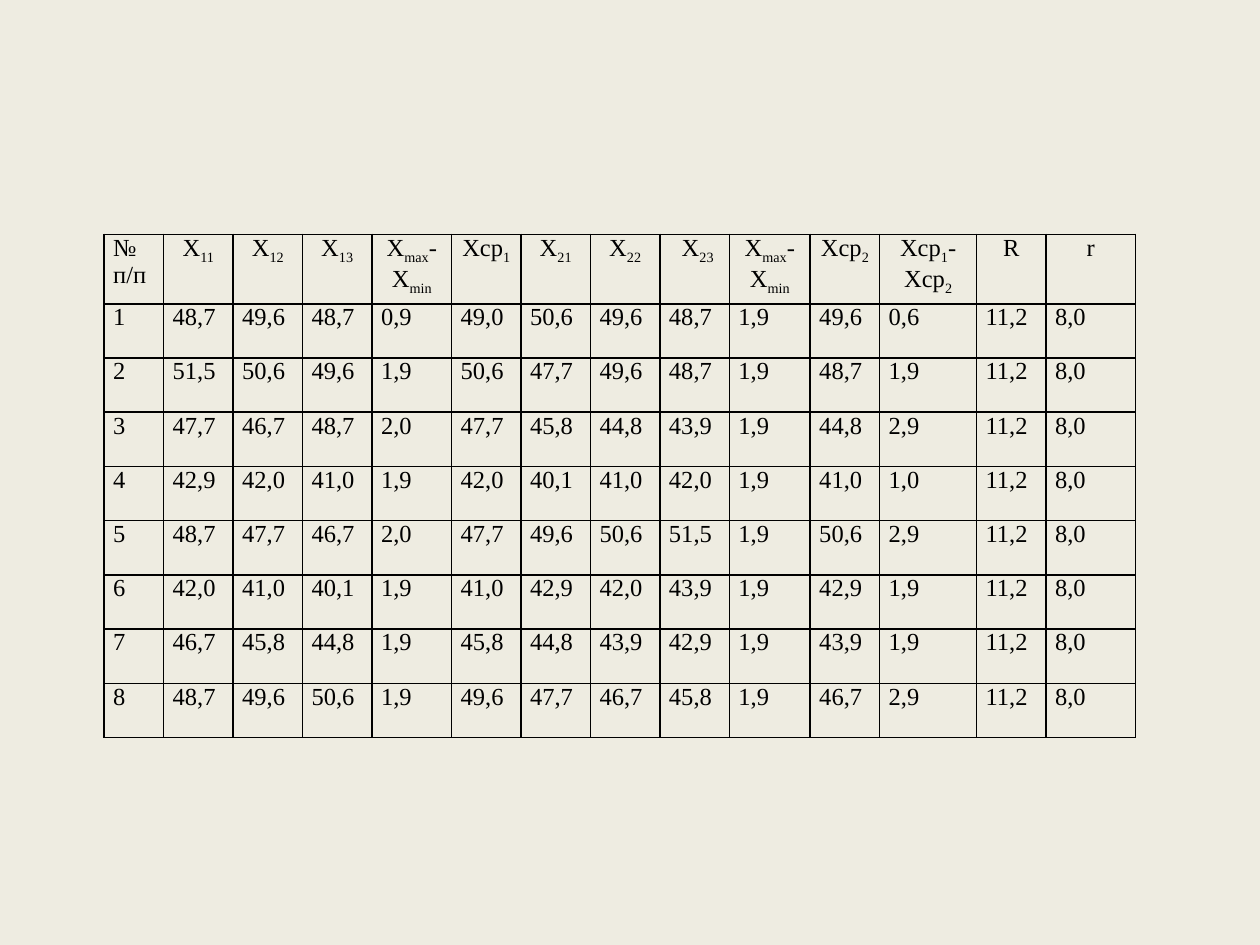
import pptx
import pptx.dml.color
import pptx.enum.text
import pptx.oxml
import pptx.oxml.ns
import pptx.util

FONT = "Times New Roman"
INK = "000000"
PAPER = "EEECE1"

# Column widths and row heights in points
NARROW = 39.7
COLUMN_WIDTHS = [34, NARROW, NARROW, NARROW, 45.5, NARROW, NARROW, NARROW,
                 NARROW, 46.2, NARROW, 55.4, NARROW, 51.2]
HEADER_HEIGHT = 39.6
ROW_HEIGHT = 31

# Each heading alternates normal and subscript pieces
HEADINGS = [
    ["№ п/п"], ["Х", "11"], ["Х", "12"], ["Х", "13"],
    ["Х", "max", "-Х", "min"], ["Хср", "1"],
    ["Х", "21"], ["Х", "22"], [" Х", "23"],
    ["Х", "max", "-Х", "min"], ["Хср", "2"],
    ["Хср", "1", "- Хср", "2"], ["R"], ["r"],
]

# One line per sample; the row number is added when the table is filled
MEASUREMENTS = [
    "48,7 49,6 48,7 0,9 49,0 50,6 49,6 48,7 1,9 49,6 0,6 11,2 8,0",
    "51,5 50,6 49,6 1,9 50,6 47,7 49,6 48,7 1,9 48,7 1,9 11,2 8,0",
    "47,7 46,7 48,7 2,0 47,7 45,8 44,8 43,9 1,9 44,8 2,9 11,2 8,0",
    "42,9 42,0 41,0 1,9 42,0 40,1 41,0 42,0 1,9 41,0 1,0 11,2 8,0",
    "48,7 47,7 46,7 2,0 47,7 49,6 50,6 51,5 1,9 50,6 2,9 11,2 8,0",
    "42,0 41,0 40,1 1,9 41,0 42,9 42,0 43,9 1,9 42,9 1,9 11,2 8,0",
    "46,7 45,8 44,8 1,9 45,8 44,8 43,9 42,9 1,9 43,9 1,9 11,2 8,0",
    "48,7 49,6 50,6 1,9 49,6 47,7 46,7 45,8 1,9 46,7 2,9 11,2 8,0",
]


def color(value):
    return pptx.dml.color.RGBColor.from_string(value)


def add_span(para, text, subscript=False):
    span = para.add_run()
    span.text = text
    span.font.name = FONT
    span.font.size = pptx.util.Pt(14)
    span.font.color.rgb = color(INK)
    if subscript:
        span._r.get_or_add_rPr().set("baseline", "-25000")


def add_borders(cell):
    properties = cell._tc.get_or_add_tcPr()
    for side in ("lnL", "lnR", "lnT", "lnB"):
        properties.append(pptx.oxml.parse_xml(
            f'<a:{side} {pptx.oxml.ns.nsdecls("a")} w="{pptx.util.Pt(1)}">'
            f'<a:solidFill><a:srgbClr val="{INK}"/></a:solidFill></a:{side}>'))


def fill_cell(cell, pieces, centered):
    cell.margin_left = cell.margin_right = pptx.util.Pt(5.2)
    cell.margin_top = cell.margin_bottom = pptx.util.Pt(0)
    add_borders(cell)
    cell.fill.background()
    para = cell.text_frame.paragraphs[0]
    align = pptx.enum.text.PP_ALIGN
    para.alignment = align.CENTER if centered else align.LEFT
    for index, text in enumerate(pieces):
        add_span(para, text, subscript=index % 2 == 1)


def add_measurement_table(page):
    heights = [HEADER_HEIGHT] + [ROW_HEIGHT] * len(MEASUREMENTS)
    frame = page.shapes.add_table(
        len(heights), len(COLUMN_WIDTHS), pptx.util.Pt(59.5), pptx.util.Pt(134),
        pptx.util.Pt(sum(COLUMN_WIDTHS)), pptx.util.Pt(sum(heights)))
    table = frame.table
    table.first_row = table.horz_banding = False
    for column, width in zip(table.columns, COLUMN_WIDTHS):
        column.width = pptx.util.Pt(width)
    for row, height in zip(table.rows, heights):
        row.height = pptx.util.Pt(height)

    # Headings, all centred except the row number
    for column, pieces in enumerate(HEADINGS):
        fill_cell(table.cell(0, column), pieces, centered=column > 0)

    # Numbered samples
    for number, line in enumerate(MEASUREMENTS, start=1):
        for column, value in enumerate([str(number)] + line.split()):
            fill_cell(table.cell(number, column), [value], centered=False)


def main():
    deck = pptx.Presentation()
    deck.slide_width = pptx.util.Pt(720)
    deck.slide_height = pptx.util.Pt(540)
    page = deck.slides.add_slide(deck.slide_layouts[6])
    page.background.fill.solid()
    page.background.fill.fore_color.rgb = color(PAPER)
    add_measurement_table(page)
    deck.save("out.pptx")


if __name__ == "__main__":
    main()
